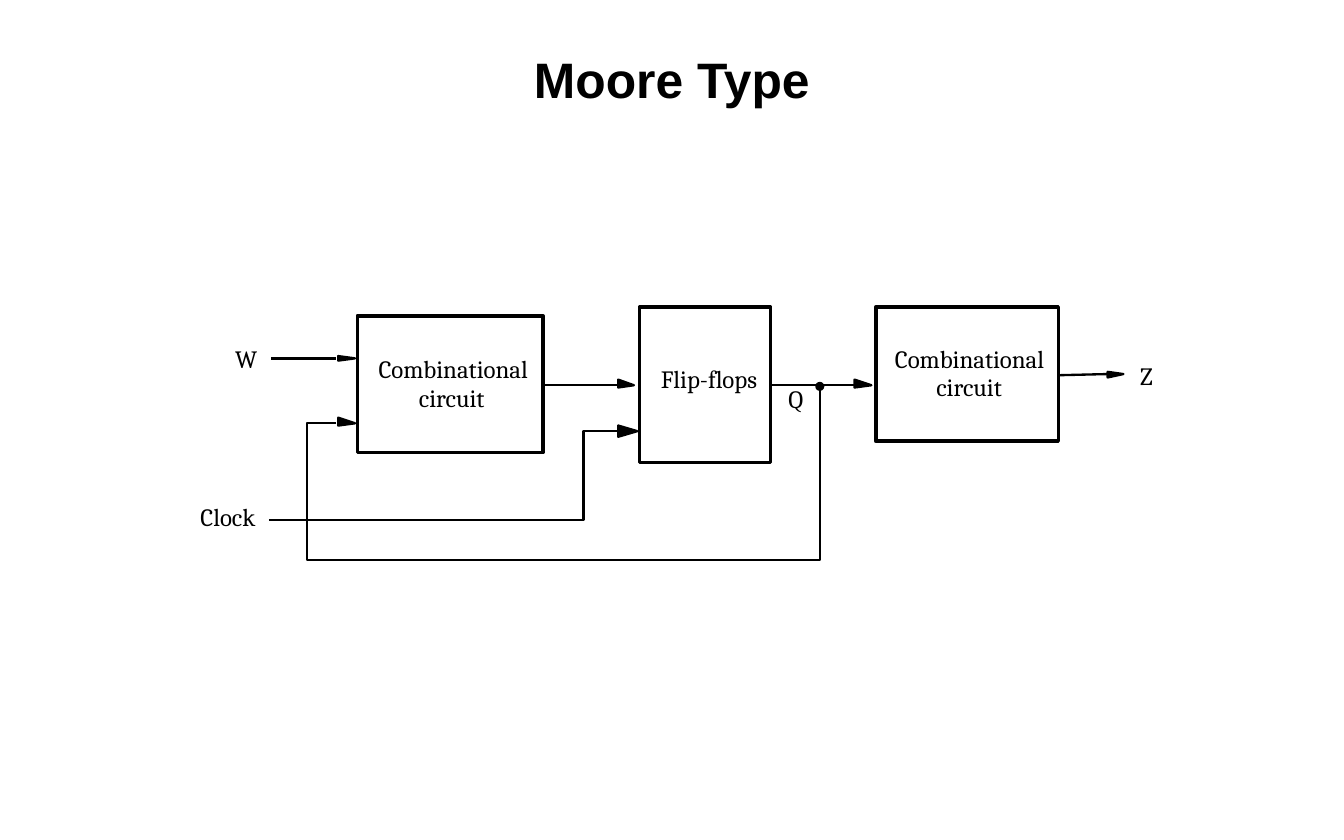
from pptx import Presentation
from pptx.dml.color import RGBColor
from pptx.enum.shapes import MSO_CONNECTOR as Connector, MSO_SHAPE as Shape
from pptx.enum.text import MSO_ANCHOR as Anchor, PP_ALIGN as Align
from pptx.oxml.ns import qn
from pptx.util import Inches, Pt
from lxml import etree

BLACK = "000000"


def write_text(shape, text, font="Cambria", size=16, bold=False, align=Align.LEFT, color=BLACK):
    paragraph = shape.text_frame.paragraphs[0]
    paragraph.alignment = align
    run = paragraph.add_run()
    run.text = text
    run.font.name, run.font.size, run.font.bold = font, Pt(size), bold
    run.font.color.rgb = RGBColor.from_string(color)


def style_shape(shape, line_width=1.5, fill=None, line=BLACK):
    shape.shadow.inherit = False
    shape.line.color.rgb = RGBColor.from_string(line)
    shape.line.width = Pt(line_width)
    if fill:
        shape.fill.solid()
        shape.fill.fore_color.rgb = RGBColor.from_string(fill)
    else:
        shape.fill.background()


presentation = Presentation()
presentation.slide_width, presentation.slide_height = Inches(12), Inches(7.5)
slide = presentation.slides.add_slide(presentation.slide_layouts[5])
shapes = slide.shapes

title = shapes.title
title.left, title.top, title.width, title.height = map(Inches, (1, 0.33, 10, 0.75))
title.text_frame.vertical_anchor = Anchor.MIDDLE
write_text(title, "Moore Type", font="Arial", size=32, bold=True, align=Align.CENTER)

# Blocks: left, top, width, height
blocks = [(3.19, 2.82, 1.66, 1.22), (5.71, 2.74, 1.17, 1.39), (7.82, 2.74, 1.63, 1.2)]
for block in blocks:
    style_shape(shapes.add_shape(Shape.RECTANGLE, *map(Inches, block)), line_width=2.25)

# Straight wires: start x, start y, end x, end y
straight_wires = [
    (2.42, 3.2, 3, 3.2),
    (4.85, 3.44, 5.52, 3.44),
    (6.89, 3.44, 7.63, 3.44),
    (9.46, 3.35, 9.89, 3.34),
]
for wire in straight_wires:
    connector = shapes.add_connector(Connector.STRAIGHT, *map(Inches, wire))
    connector.line.color.rgb = RGBColor.from_string(BLACK)
    connector.line.width = Pt(1.5)
    etree.SubElement(connector._element.spPr, qn("a:effectLst"))

clock_wire = [(2.4, 4.64), (5.21, 4.64), (5.21, 3.85), (5.52, 3.85)]
feedback_wire = [(3, 3.78), (2.74, 3.78), (2.74, 5), (7.32, 5), (7.32, 3.44)]
outlines = [(clock_wire, False), (feedback_wire, False)]

# Arrowheads: left, right, top, tip height, bottom
arrowheads = [
    (3.02, 3.17, 3.18, 3.2, 3.22),
    (3.02, 3.17, 3.73, 3.78, 3.8),
    (5.52, 5.66, 3.39, 3.44, 3.46),
    (5.52, 5.69, 3.8, 3.85, 3.9),
    (7.63, 7.78, 3.39, 3.44, 3.46),
    (9.89, 10.03, 3.32, 3.34, 3.37),
]
for left, right, top, tip, bottom in arrowheads:
    outlines.append(([(left, bottom), (right, tip), (left, top)], True))

for points, closed in outlines:
    start, *rest = [(Inches(x), Inches(y)) for x, y in points]
    builder = shapes.build_freeform(*start)
    builder.add_line_segments(rest, close=closed)
    style_shape(builder.convert_to_shape(), fill=BLACK if closed else None)

junction = shapes.add_shape(Shape.OVAL, *map(Inches, (7.29, 3.42, 0.06, 0.06)))
style_shape(junction, fill=BLACK)

# Labels: text, left, top, width
labels = [
    ("Combinational", 3.38, 3.16, 1.38),
    ("circuit", 3.74, 3.42, 0.63),
    ("Flip-flops", 5.9, 3.25, 0.89),
    ("Combinational", 7.99, 3.07, 1.39),
    ("circuit", 8.36, 3.32, 0.63),
    ("W", 2.1, 3.07, 0.27),
    ("Clock", 1.79, 4.48, 0.59),
    ("Q", 7.04, 3.43, 0.22),
    ("Z", 10.18, 3.22, 0.19),
]
for text, left, top, width in labels:
    label = shapes.add_textbox(*map(Inches, (left, top, width, 0.27)))
    frame = label.text_frame
    frame.word_wrap = False
    frame.margin_left = frame.margin_right = frame.margin_top = frame.margin_bottom = 0
    write_text(label, text)

presentation.save("out.pptx")
